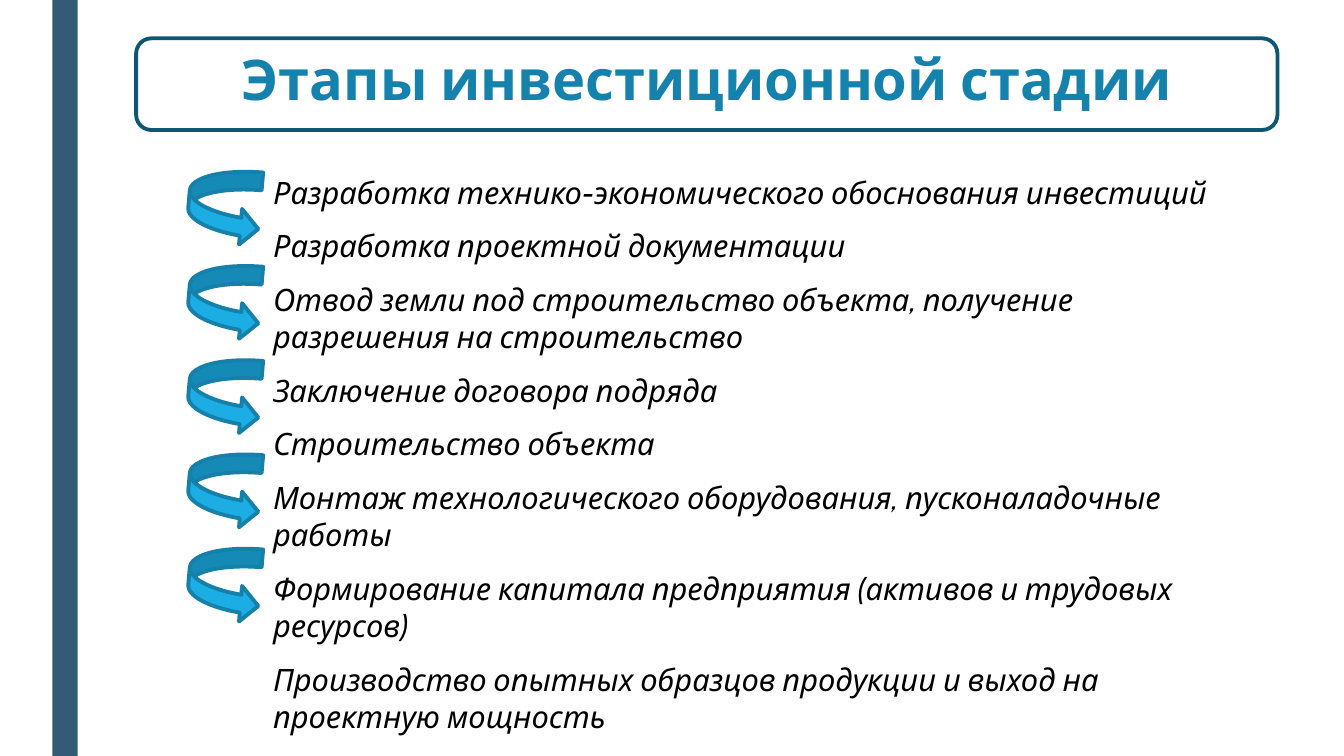
from pptx import Presentation
from pptx.dml.color import RGBColor
from pptx.enum.shapes import MSO_SHAPE
from pptx.enum.text import MSO_ANCHOR, MSO_AUTO_SIZE, PP_ALIGN
from pptx.util import Pt

EMU_PER_PX = 9144
FONT = "Cabin"
WHITE = RGBColor(0xFF, 0xFF, 0xFF)
BLACK = RGBColor(0x00, 0x00, 0x00)
SLATE = RGBColor(0x33, 0x5B, 0x74)
DARK_TEAL = RGBColor(0x0E, 0x57, 0x72)
TITLE_BLUE = RGBColor(0x14, 0x82, 0xAC)
ARROW_FILL = RGBColor(0x1C, 0xAD, 0xE4)
ARROW_LINE = RGBColor(0x15, 0x80, 0xA9)

TITLE = "Этапы инвестиционной стадии"
STAGES = [
    "Разработка технико-экономического обоснования инвестиций",
    "Разработка проектной документации",
    "Отвод земли под строительство объекта, получение разрешения на строительство",
    "Заключение договора подряда",
    "Строительство объекта",
    "Монтаж технологического оборудования, пусконаладочные работы",
    "Формирование капитала предприятия (активов и трудовых ресурсов)",
    "Производство опытных образцов продукции и выход на проектную мощность",
]
ARROW_COUNT = 5
ARROW_TOP = 168
ARROW_PITCH = 93.5


def px(length):
    return round(length * EMU_PER_PX)


def write_text(paragraph, text, size, color, bold=False, italic=False,
               align=PP_ALIGN.LEFT, before=0, after=0, spacing=1.0):
    paragraph.alignment = align
    paragraph.space_before = Pt(before)
    paragraph.space_after = Pt(after)
    paragraph.line_spacing = spacing
    run = paragraph.add_run()
    run.text = text
    font = run.font
    font.name, font.size = FONT, Pt(size)
    font.bold, font.italic = bold, italic
    font.color.rgb = color


class StageSlide:
    """Draws the elements of one slide in a shared style."""

    def __init__(self, slide, line_width=2.75):
        self.slide = slide
        self.line_width = line_width

    def shape(self, kind, box, fill, line=None, rotation=0):
        shape = self.slide.shapes.add_shape(kind, *map(px, box))
        shape.shadow.inherit = False
        shape.rotation = rotation
        shape.fill.solid()
        shape.fill.fore_color.rgb = fill
        if line is None:
            shape.line.fill.background()
        else:
            shape.line.color.rgb = line
            shape.line.width = Pt(self.line_width)
        return shape

    def title(self, box, text):
        shape = self.shape(MSO_SHAPE.ROUNDED_RECTANGLE, box, WHITE, DARK_TEAL)
        frame = shape.text_frame
        frame.word_wrap = True
        frame.vertical_anchor = MSO_ANCHOR.MIDDLE
        write_text(frame.paragraphs[0], text, 40, TITLE_BLUE, bold=True,
                   align=PP_ALIGN.CENTER, before=12, after=6, spacing=0.8)

    def stage_list(self, box, stages):
        frame = self.slide.shapes.add_textbox(*map(px, box)).text_frame
        frame.word_wrap = True
        frame.auto_size = MSO_AUTO_SIZE.SHAPE_TO_FIT_TEXT
        for index, stage in enumerate(stages):
            paragraph = frame.add_paragraph() if index else frame.paragraphs[0]
            write_text(paragraph, stage, 22, BLACK, italic=True, after=12)

    def arrow(self, top):
        self.shape(MSO_SHAPE.CURVED_RIGHT_ARROW, (187, top, 71, 74),
                   ARROW_FILL, ARROW_LINE, rotation=4.9)


def main():
    presentation = Presentation()
    presentation.slide_width = px(1333)
    presentation.slide_height = px(750)
    slide = presentation.slides.add_slide(presentation.slide_layouts[6])
    stage_slide = StageSlide(slide)
    stage_slide.shape(MSO_SHAPE.RECTANGLE, (52, 0, 25, 750), SLATE)
    stage_slide.title((135, 38, 1132, 91), TITLE)
    stage_slide.stage_list((261, 167, 989, 498), STAGES)
    for index in range(ARROW_COUNT):
        stage_slide.arrow(ARROW_TOP + index * ARROW_PITCH)
    presentation.save("out.pptx")


if __name__ == "__main__":
    main()
